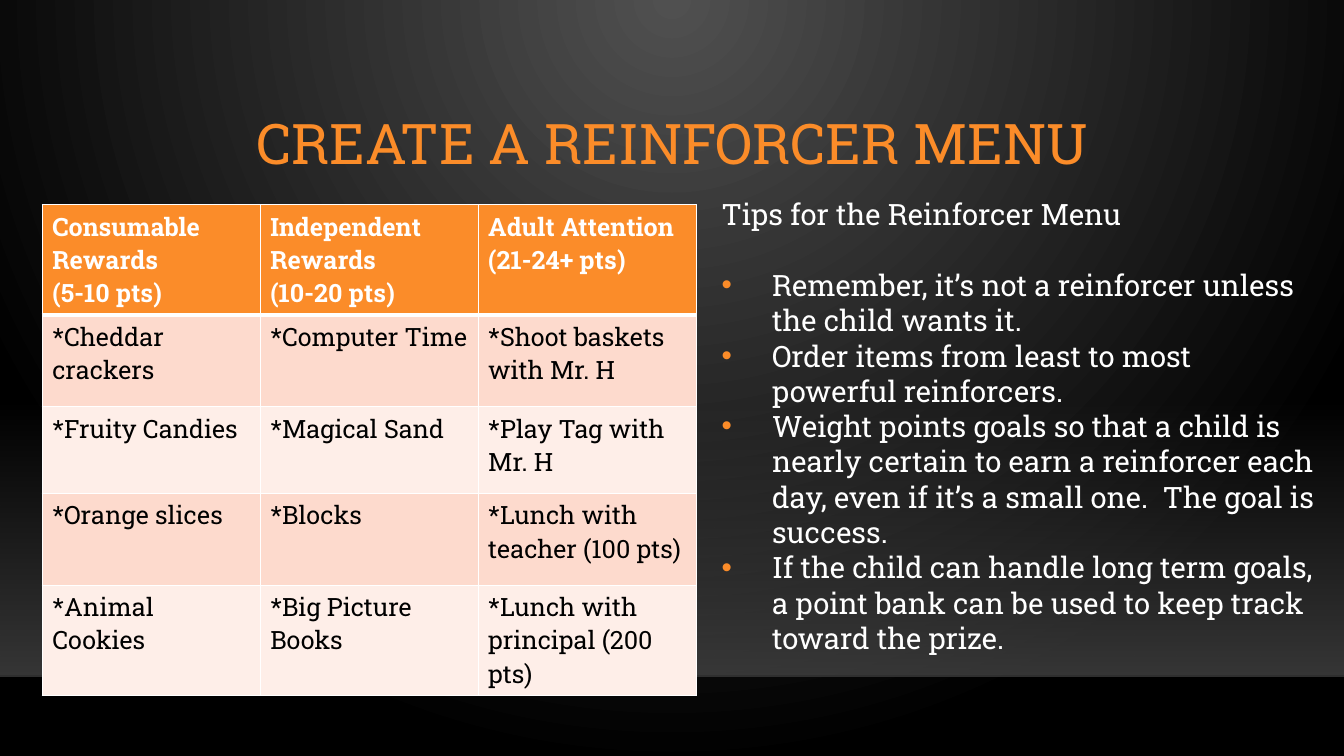
from dataclasses import dataclass

from lxml.etree import SubElement
from pptx import Presentation
from pptx.dml.color import RGBColor
from pptx.enum.shapes import MSO_CONNECTOR, MSO_SHAPE
from pptx.enum.text import MSO_ANCHOR, MSO_AUTO_SIZE, PP_ALIGN
from pptx.oxml.ns import qn
from pptx.util import Pt

FONT = "Roboto Slab"
ORANGE = "FB8C29"
WHITE = "FFFFFF"
BLACK = "000000"
SLIDE_WIDTH, SLIDE_HEIGHT = 960, 540
HORIZON = 482.9


@dataclass(frozen=True)
class TextStyle:
    size: float
    color: str
    bold: bool = False


@dataclass(frozen=True)
class MenuRow:
    cells: tuple[str, str, str]
    height: float
    fill: str
    style: TextStyle
    top_border: float = 1
    bottom_border: float = 1


TITLE_STYLE = TextStyle(40, ORANGE)
TIP_STYLE = TextStyle(21, WHITE)
HEADER_STYLE = TextStyle(18, WHITE, bold=True)
REWARD_STYLE = TextStyle(18, BLACK)
DARK_ROW, LIGHT_ROW = "FDDACD", "FEEEE8"

MENU = (
    MenuRow(("Consumable Rewards\n(5-10 pts)", "Independent Rewards\n(10-20 pts)",
             "Adult Attention\n(21-24+ pts)"), 78.8, ORANGE, HEADER_STYLE, bottom_border=3),
    MenuRow(("*Cheddar crackers", "*Computer Time", "*Shoot baskets with Mr. H"),
            65.5, DARK_ROW, REWARD_STYLE, top_border=3),
    MenuRow(("*Fruity Candies", "*Magical Sand", "*Play Tag with Mr. H"),
            62, LIGHT_ROW, REWARD_STYLE),
    MenuRow(("*Orange slices", "*Blocks", "*Lunch with teacher (100 pts)"),
            65.5, DARK_ROW, REWARD_STYLE),
    MenuRow(("*Animal Cookies", "*Big Picture Books", "*Lunch with principal (200 pts)"),
            78.8, LIGHT_ROW, REWARD_STYLE),
)

TIPS_HEADING = "Tips for the Reinforcer Menu"
TIPS = (
    "Remember, it’s not a reinforcer unless the child wants it.",
    "Order items from least to most powerful reinforcers.",
    "Weight points goals so that a child is nearly certain to earn a reinforcer each day, "
    "even if it’s a small one.  The goal is success.",
    "If the child can handle long term goals, a point bank can be used to keep track "
    "toward the prize.",
)


def rgb(color: str) -> RGBColor:
    return RGBColor.from_string(color)


def add_run(paragraph, text: str, style: TextStyle) -> None:
    run = paragraph.add_run()
    run.text = text
    run.font.name = FONT
    run.font.size = Pt(style.size)
    run.font.bold = style.bold
    run.font.color.rgb = rgb(style.color)


def place(shape, left: float, top: float, width: float, height: float) -> None:
    shape.left, shape.top = Pt(left), Pt(top)
    shape.width, shape.height = Pt(width), Pt(height)


def set_gradient(fill, first: str, last: str) -> None:
    fill.gradient()
    for stop, color in zip(fill.gradient_stops, (first, last)):
        stop.color.rgb = rgb(color)
    fill.gradient_stops[0].position = 0
    fill.gradient_stops[1].position = 1


def set_opacity(color_element, percent: int) -> None:
    SubElement(color_element, qn("a:alpha"), val=str(percent * 1000))


def paint_background(slide) -> None:
    """Spread a radial glow from the middle of the top edge."""
    set_gradient(slide.background.fill, "505050", BLACK)
    gradient = slide.element.xpath(".//p:bg//a:gradFill")[0]
    for linear in gradient.findall(qn("a:lin")):
        gradient.remove(linear)
    glow = SubElement(gradient, qn("a:path"), path="circle")
    SubElement(glow, qn("a:fillToRect"), l="43000", t="0", r="43000", b="100000")


def add_floor(slide) -> None:
    """Put the fading band and its horizon line behind the title."""
    band = slide.shapes.add_shape(MSO_SHAPE.RECTANGLE, 0, Pt(285.3), Pt(SLIDE_WIDTH),
                                  Pt(HORIZON - 285.3))
    band.shadow.inherit = False
    band.line.fill.background()
    set_gradient(band.fill, "454545", "454545")
    band.fill.gradient_angle = 270
    for color_element, opacity in zip(band.element.xpath(".//a:gs/a:srgbClr"), (0, 80)):
        set_opacity(color_element, opacity)

    horizon = slide.shapes.add_connector(MSO_CONNECTOR.STRAIGHT, 0, Pt(HORIZON),
                                         Pt(SLIDE_WIDTH), Pt(HORIZON))
    horizon.line.width = Pt(1)
    horizon.line.color.rgb = rgb("000001")
    set_opacity(horizon.element.xpath(".//a:ln//a:srgbClr")[0], 20)
    SubElement(horizon.element.spPr, qn("a:effectLst"))

    for shape in (band, horizon):
        slide.shapes.title.element.addprevious(shape.element)


def fill_title(title) -> None:
    place(title, 114.5, 63.4, 731.5, 82.8)
    frame = title.text_frame
    frame.word_wrap = True
    frame.auto_size = MSO_AUTO_SIZE.NONE
    frame.vertical_anchor = MSO_ANCHOR.MIDDLE
    paragraph = frame.paragraphs[0]
    paragraph.alignment = PP_ALIGN.CENTER
    paragraph.line_spacing = 0.9
    add_run(paragraph, "CREATE A REINFORCER MENU", TITLE_STYLE)


def set_bullet(paragraph, indent: float, bullet: str = "") -> None:
    properties = paragraph._p.get_or_add_pPr()
    properties.set("marL", str(Pt(indent)))
    properties.set("indent", str(-Pt(indent)))
    if not bullet:
        SubElement(properties, qn("a:buNone"))
        return
    bullet_color = SubElement(properties, qn("a:buClr"))
    SubElement(bullet_color, qn("a:srgbClr"), val=ORANGE)
    SubElement(properties, qn("a:buFont"), typeface="Arial")
    SubElement(properties, qn("a:buChar"), char=bullet)


def fill_tips(body) -> None:
    place(body, 508.3, 136.8, 440.6, 360)
    frame = body.text_frame
    frame.word_wrap = True
    frame.auto_size = MSO_AUTO_SIZE.SHAPE_TO_FIT_TEXT
    frame.vertical_anchor = MSO_ANCHOR.TOP
    heading = frame.paragraphs[0]
    set_bullet(heading, 0)
    add_run(heading, TIPS_HEADING, TIP_STYLE)
    for tip in TIPS:
        paragraph = frame.add_paragraph()
        set_bullet(paragraph, 36, "•")
        add_run(paragraph, tip, TIP_STYLE)
    for paragraph in frame.paragraphs:
        paragraph.alignment = PP_ALIGN.LEFT
        paragraph.line_spacing = 1.0
        paragraph.space_before = Pt(0)
    heading.space_after = Pt(25.2)


def set_borders(cell, top: float, bottom: float) -> None:
    """Draw white borders; the cell's fill must be set afterwards."""
    properties = cell._tc.get_or_add_tcPr()
    for side, width in (("L", 1), ("R", 1), ("T", top), ("B", bottom)):
        border = SubElement(properties, qn(f"a:ln{side}"), w=str(Pt(width)))
        solid = SubElement(border, qn("a:solidFill"))
        SubElement(solid, qn("a:srgbClr"), val=WHITE)


def add_menu(slide) -> None:
    total_height = sum(row.height for row in MENU)
    table = slide.shapes.add_table(len(MENU), 3, Pt(30.2), Pt(146.2), Pt(467.1),
                                   Pt(total_height)).table
    for column in table.columns:
        column.width = Pt(155.7)
    for row_index, row in enumerate(MENU):
        table.rows[row_index].height = Pt(row.height)
        for column_index, text in enumerate(row.cells):
            cell = table.cell(row_index, column_index)
            set_borders(cell, row.top_border, row.bottom_border)
            cell.fill.solid()
            cell.fill.fore_color.rgb = rgb(row.fill)
            frame = cell.text_frame
            for line_index, line in enumerate(text.split("\n")):
                paragraph = frame.add_paragraph() if line_index else frame.paragraphs[0]
                add_run(paragraph, line, row.style)


def main() -> None:
    presentation = Presentation()
    presentation.slide_width, presentation.slide_height = Pt(SLIDE_WIDTH), Pt(SLIDE_HEIGHT)
    slide = presentation.slides.add_slide(presentation.slide_layouts[1])
    paint_background(slide)
    add_floor(slide)
    fill_title(slide.shapes.title)
    add_menu(slide)
    fill_tips(slide.placeholders[1])
    presentation.save("out.pptx")


if __name__ == "__main__":
    main()
